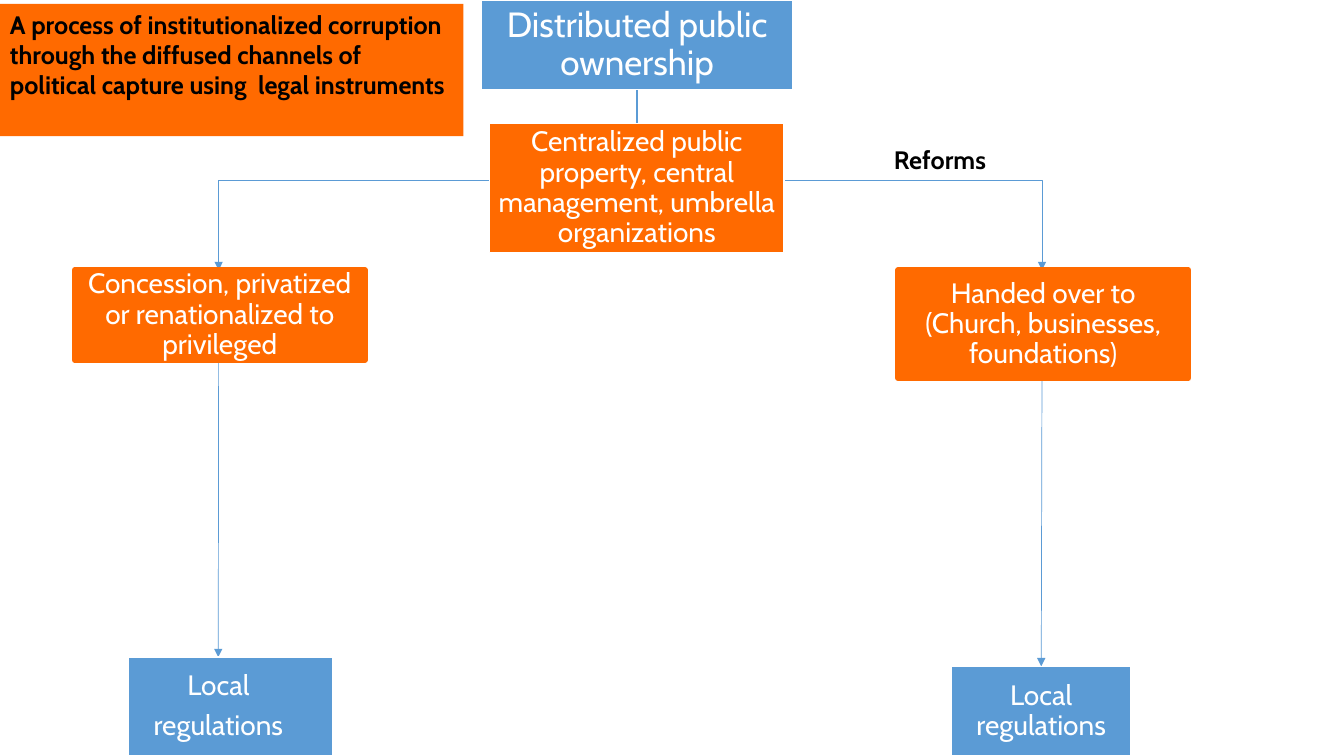
from dataclasses import dataclass

from lxml.etree import SubElement
from pptx import Presentation
from pptx.dml.color import RGBColor
from pptx.enum.shapes import MSO_CONNECTOR, MSO_SHAPE
from pptx.enum.text import MSO_ANCHOR, PP_ALIGN
from pptx.oxml.ns import qn
from pptx.util import Cm, Pt

COLORS = {"blue": "5B9BD5", "orange": "FF6A00", "white": "FFFFFF", "black": "000000"}
FONT = "Cabin"
INSET = 0.05


@dataclass
class Box:
    text: str
    left: float
    top: float
    width: float
    height: float
    fill: str = "orange"
    line: str = "white"
    line_pt: float = 1
    size: float = 20
    right_inset: float = INSET


@dataclass
class Arrow:
    x1: float
    y1: float
    x2: float
    y2: float
    elbow: bool = False


# Lengths in centimetres
ARROWS = [
    Arrow(16.05, 2.26, 5.51, 6.81, elbow=True),
    Arrow(16.05, 2.26, 26.26, 6.81, elbow=True),
    Arrow(5.51, 9.07, 5.5, 16.56),
    Arrow(26.26, 9.07, 26.24, 16.79),
]
BOXES = [
    Box("Distributed public ownership", 12.12, 0, 7.87, 2.26, fill="blue", size=25),
    Box("Centralized public property, central management, umbrella organizations",
        12.34, 3.12, 7.42, 3.25),
    Box("Concession, privatized or renationalized to privileged",
        1.88, 6.81, 7.32, 2.26, line="orange", line_pt=4),
    Box("Handed over to (Church, businesses, foundations)",
        22.63, 6.81, 7.32, 2.72, line="orange", line_pt=4),
    Box("Local\nregulations", 3.23, 16.56, 5.16, 2.49, fill="blue", right_inset=0.66),
    Box("Local regulations", 23.98, 16.79, 4.52, 2.26, fill="blue"),
]


def rgb(name: str) -> RGBColor:
    return RGBColor.from_string(COLORS[name])


def style_runs(p, size: float, color: str, bold: bool = False) -> None:
    for r in p.runs:
        r.font.name = FONT
        r.font.size = Pt(size)
        r.font.bold = bold
        r.font.color.rgb = rgb(color)


def add_box(s, box: Box) -> None:
    sp = s.shapes.add_shape(MSO_SHAPE.RECTANGLE, Cm(box.left), Cm(box.top),
                            Cm(box.width), Cm(box.height))
    sp.shadow.inherit = False
    sp.fill.solid()
    sp.fill.fore_color.rgb = rgb(box.fill)
    sp.line.color.rgb = rgb(box.line)
    sp.line.width = Pt(box.line_pt)
    tf = sp.text_frame
    tf.text = box.text
    tf.word_wrap = True
    tf.vertical_anchor = MSO_ANCHOR.MIDDLE
    tf.margin_left = tf.margin_top = tf.margin_bottom = Cm(INSET)
    tf.margin_right = Cm(box.right_inset)
    for p in tf.paragraphs:
        p.alignment = PP_ALIGN.CENTER
        p.line_spacing = 0.9
        p.space_after = Pt(0.35 * box.size)
        style_runs(p, box.size, "white")


def add_arrow(s, arrow: Arrow) -> None:
    x1, y1, x2, y2 = arrow.x1, arrow.y1, arrow.x2, arrow.y2
    kind = MSO_CONNECTOR.STRAIGHT
    if arrow.elbow:
        # A quarter turn makes the elbow leave downwards
        kind = MSO_CONNECTOR.ELBOW
        cx, cy = (x1 + x2) / 2, (y1 + y2) / 2
        half_w, half_h = (y2 - y1) / 2, abs(x2 - x1) / 2
        to_left = x2 < x1
        side = half_w if to_left else -half_w
        x1, y1, x2, y2 = cx - side, cy - half_h, cx + side, cy + half_h
    c = s.shapes.add_connector(kind, Cm(x1), Cm(y1), Cm(x2), Cm(y2))
    c.line.color.rgb = rgb("blue")
    c.line.width = Pt(0.5)
    spPr = c._element.spPr
    if arrow.elbow:
        spPr.find(qn("a:xfrm")).set("rot", str((90 if to_left else 270) * 60000))
    SubElement(spPr.find(qn("a:ln")), qn("a:tailEnd"), type="triangle")
    SubElement(spPr, qn("a:effectLst"))


def add_label(s, text: str, left: float, top: float, width: float, height: float,
              wrap: bool = True):
    sp = s.shapes.add_textbox(Cm(left), Cm(top), Cm(width), Cm(height))
    tf = sp.text_frame
    tf.text = text
    tf.word_wrap = wrap
    style_runs(tf.paragraphs[0], 18, "black", bold=True)
    return sp


def main() -> None:
    prs = Presentation()
    prs.slide_width, prs.slide_height = Cm(33.87), Cm(19.05)
    s = prs.slides.add_slide(prs.slide_layouts[6])

    # Flow chart: arrows behind boxes
    for arrow in ARROWS:
        add_arrow(s, arrow)
    for box in BOXES:
        add_box(s, box)

    # Summary note and branch label
    note = add_label(s, "A process of institutionalized corruption through the diffused "
                     "channels of political capture using  legal instruments",
                     0, 0.1, 11.68, 3.33)
    note.fill.solid()
    note.fill.fore_color.rgb = rgb("orange")
    add_label(s, "Reforms", 22.28, 3.51, 3.02, 1.02, wrap=False)

    prs.save("out.pptx")


if __name__ == "__main__":
    main()
